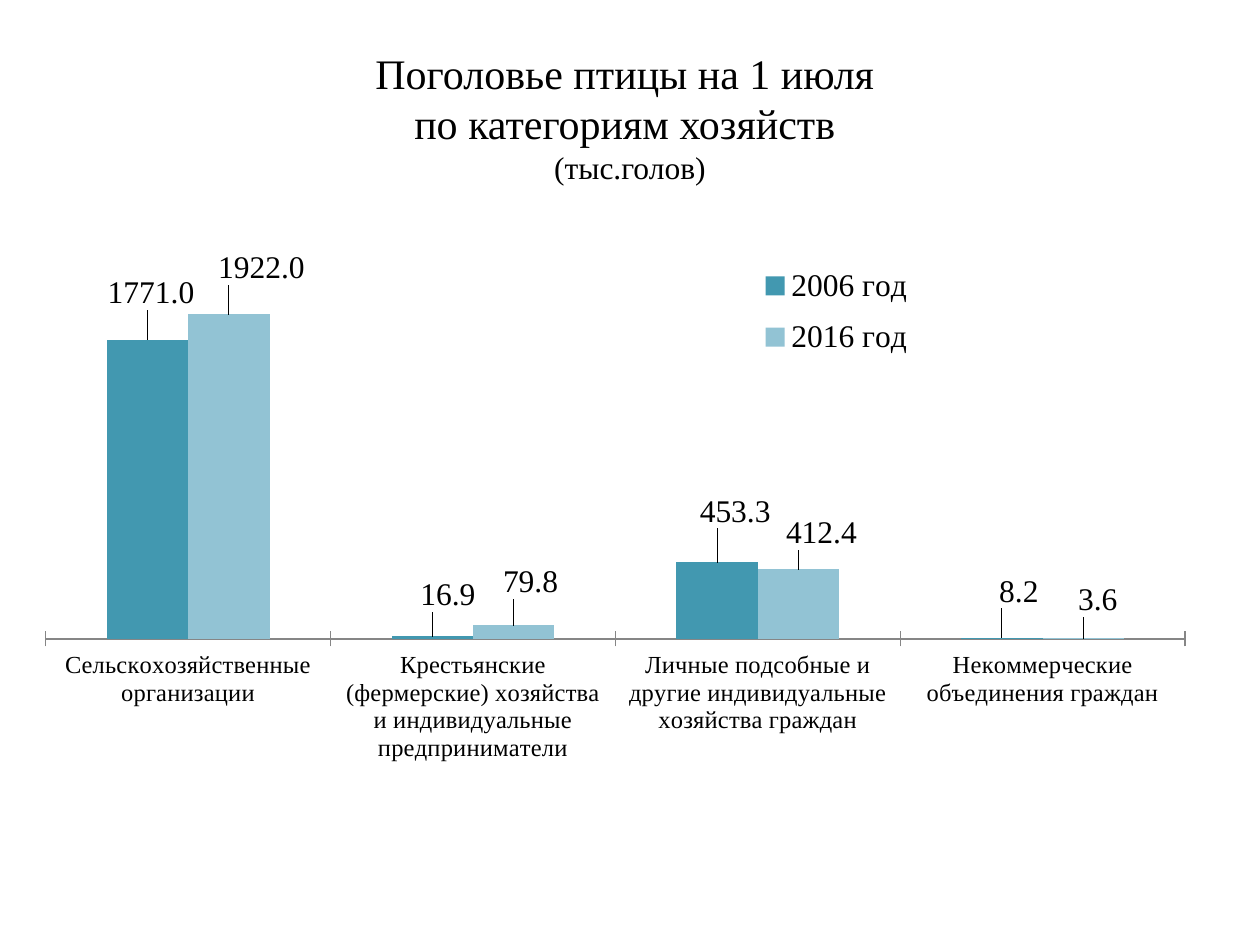
"""Build a slide with a column chart of poultry numbers by type of farm."""
from lxml.etree import SubElement
from pptx import Presentation
from pptx.chart.data import CategoryChartData
from pptx.dml.color import RGBColor
from pptx.enum.chart import XL_CHART_TYPE, XL_LABEL_POSITION, XL_LEGEND_POSITION, XL_TICK_MARK
from pptx.enum.text import MSO_ANCHOR, PP_ALIGN
from pptx.oxml.ns import qn
from pptx.util import Inches, Pt

COLORS = {"text": "000000", "axis": "868686", "2006 год": "4298B0", "2016 год": "92C3D4"}
FONT = {"name": "Times New Roman", "bold": False}
FARMS = [
    "Сельскохозяйственные организации",
    "Крестьянские (фермерские) хозяйства и индивидуальные предприниматели",
    "Личные подсобные и другие индивидуальные хозяйства граждан",
    "Некоммерческие объединения граждан",
]
HEADS = {"2006 год": [1771, 16.9, 453.3, 8.2], "2016 год": [1922, 79.8, 412.4, 3.6]}
SHIFTS = {
    "2006 год": [(0.3, -3.5), (1.3, -2.7), (1.5, -4.1), (1.4, -3.4)],
    "2016 год": [(2.7, -3.4), (1.4, -3), (1.9, -2), (1.2, -2.3)],
}


def style(font, size):
    for key, value in {**FONT, "size": Pt(size)}.items():
        setattr(font, key, value)
    font.color.rgb = RGBColor.from_string(COLORS["text"])


def place(parent, index, **values):
    layout = SubElement(parent, qn("c:layout"))
    manual = SubElement(layout, qn("c:manualLayout"))
    for key, value in values.items():
        SubElement(manual, qn("c:" + key)).set("val", str(value))
    for old in parent.findall(qn("c:layout"))[:-1]:
        parent.remove(old)
    parent.insert(index, layout)


deck = Presentation()
deck.slide_width, deck.slide_height = Inches(10), Inches(7.5)
slide = deck.slides.add_slide(deck.slide_layouts[5])

title = slide.shapes.title
box = {"left": 0.5, "top": 0.3, "width": 9, "height": 1.25}
for key, value in box.items():
    setattr(title, key, Inches(value))
title.text_frame.vertical_anchor = MSO_ANCHOR.MIDDLE
head = title.text_frame.paragraphs[0]
head.alignment = PP_ALIGN.CENTER
for text, size in [("Поголовье птицы на 1 июля ", 24), ("по категориям хозяйств ", 24), ("(тыс.голов)", 18)]:
    if head.runs:
        head.add_line_break()
    run = head.add_run()
    run.text = text
    style(run.font, size)

data = CategoryChartData(number_format="0.0")
data.categories = FARMS
for year, values in HEADS.items():
    data.add_series(year, values)
chart = slide.shapes.add_chart(
    XL_CHART_TYPE.COLUMN_CLUSTERED, Inches(0.2), Inches(1.55), Inches(9.61), Inches(5.59), data
).chart
style(chart.font, 18)
chart.font.name = "Calibri"
chart.has_title = False

farms = chart.category_axis
farms.major_tick_mark = XL_TICK_MARK.CROSS
farms.format.line.color.rgb = RGBColor.from_string(COLORS["axis"])
style(farms.tick_labels.font, 14)
scale = {"visible": False, "has_major_gridlines": False, "minimum_scale": 0, "maximum_scale": 2500}
for key, value in scale.items():
    setattr(chart.value_axis, key, value)

chart.has_legend = True
legend = chart.legend
legend.position = XL_LEGEND_POSITION.RIGHT
legend.include_in_layout = False
style(legend.font, 18)
place(legend._element, 1, xMode="edge", yMode="edge", x=0.6, y=0.08, w=0.14, h=0.17)

plot = chart.plots[0]
for key, value in {"gap_width": 150, "overlap": 0, "vary_by_categories": False}.items():
    setattr(plot, key, value)
area = chart._chartSpace.chart.plotArea
place(area, 0, layoutTarget="inner", xMode="edge", yMode="edge", x=0.017, y=0.03, w=0.941, h=0.6)

for bars in plot.series:
    bars.format.fill.solid()
    bars.format.fill.fore_color.rgb = RGBColor.from_string(COLORS[bars.name])
    bars.invert_if_negative = False
    labels = bars.data_labels
    labels.show_value = True
    labels.number_format = "0.0"
    labels.number_format_is_linked = False
    style(labels.font, 18)
    for spot in range(len(FARMS)):
        label = bars.points[spot].data_label
        style(label.font, 18)
        label.position = XL_LABEL_POSITION.OUTSIDE_END
    for node, (right, down) in zip(bars._element.iter(qn("c:dLbl")), SHIFTS[bars.name]):
        place(node, 1, x=right / 100, y=down / 100)
        form = SubElement(node, qn("c:numFmt"))
        form.set("formatCode", "0.0")
        form.set("sourceLinked", "0")
        node.insert(2, form)

deck.save("out.pptx")
